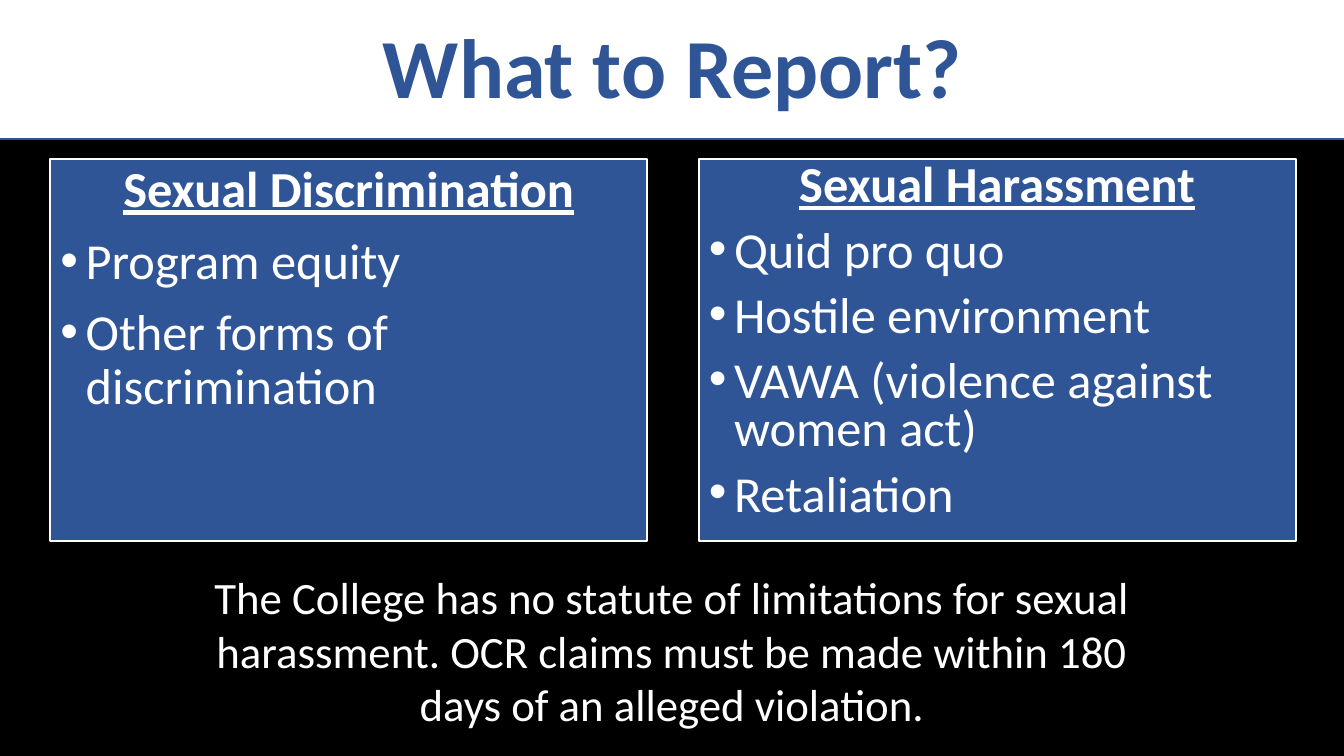
from dataclasses import dataclass

import pptx
import pptx.dml.color
import pptx.enum.shapes
import pptx.enum.text
import pptx.oxml.ns
import pptx.util
from lxml import etree

Inches = pptx.util.Inches
Pt = pptx.util.Pt
CENTER = pptx.enum.text.PP_ALIGN.CENTER
LEFT = pptx.enum.text.PP_ALIGN.LEFT
FIT = pptx.enum.text.MSO_AUTO_SIZE
ANCHOR = pptx.enum.text.MSO_ANCHOR

BLUE, WHITE, BLACK = "2F5597", "FFFFFF", "000000"


@dataclass
class Panel:
    left: float
    lines: float
    head: str
    items: list[str]


PANELS = [
    Panel(0.5, 0.9, "Sexual Discrimination",
          ["Program equity", "Other forms of discrimination"]),
    Panel(6.93, 0.8, "Sexual Harassment",
          ["Quid pro quo", "Hostile environment",
           "VAWA (violence against women act)", "Retaliation"]),
]


def color(code: str) -> pptx.dml.color.RGBColor:
    return pptx.dml.color.RGBColor.from_string(code)


def place(shape, left: float, top: float, width: float, height: float) -> None:
    shape.left, shape.top = Inches(left), Inches(top)
    shape.width, shape.height = Inches(width), Inches(height)


def paint(shape, fill: str, line: str, weight: float) -> None:
    shape.fill.solid()
    shape.fill.fore_color.rgb = color(fill)
    shape.line.color.rgb = color(line)
    shape.line.width = Pt(weight)


def write(para, text: str, *, size: float, ink: str = WHITE, bold: bool = False,
          under: bool = False, align=CENTER, lines: float = 1.0,
          after: float = 0, bullet: bool = False) -> None:
    para.alignment = align
    para.line_spacing = lines
    para.space_before, para.space_after = Pt(0), Pt(after)
    run = para.add_run()
    run.text = text
    font = run.font
    font.name, font.size, font.bold, font.underline = "Calibri", Pt(size), bold, under
    font.color.rgb = color(ink)
    # Bullet and hanging indent
    props = para._p.get_or_add_pPr()
    hang = Inches(0.25) if bullet else 0
    props.set("marL", str(hang))
    props.set("indent", str(-hang))
    if bullet:
        face = etree.SubElement(props, pptx.oxml.ns.qn("a:buFont"))
        face.set("typeface", "Arial")
        mark = etree.SubElement(props, pptx.oxml.ns.qn("a:buChar"))
        mark.set("char", "•")
    else:
        etree.SubElement(props, pptx.oxml.ns.qn("a:buNone"))


def fill_panel(shape, panel: Panel) -> None:
    place(shape, panel.left, 1.58, 5.92, 3.79)
    paint(shape, BLUE, WHITE, 1.5)
    frame = shape.text_frame
    frame.auto_size = FIT.NONE
    frame.vertical_anchor = ANCHOR.TOP
    write(frame.paragraphs[0], panel.head, size=36, bold=True, under=True,
          lines=panel.lines, after=12)
    for item in panel.items:
        write(frame.add_paragraph(), item, size=36, align=LEFT,
              lines=panel.lines, after=12, bullet=True)


def main() -> None:
    deck = pptx.Presentation()
    deck.slide_width, deck.slide_height = Inches(13.33), Inches(7.5)
    slide = deck.slides.add_slide(deck.slide_layouts.get_by_name("Two Content"))
    slide.background.fill.solid()
    slide.background.fill.fore_color.rgb = color(BLACK)
    title, *bodies = slide.placeholders

    # Title band, set behind the title
    band = slide.shapes.add_shape(
        pptx.enum.shapes.MSO_SHAPE.RECTANGLE,
        Inches(-0.13), Inches(-0.14), Inches(13.59), Inches(1.52))
    band.shadow.inherit = False
    paint(band, WHITE, BLUE, 1.75)
    title.element.addprevious(band.element)

    # Title
    place(title, 0.92, 0.4, 11.5, 0.62)
    title.text_frame.auto_size = FIT.NONE
    title.text_frame.vertical_anchor = ANCHOR.MIDDLE
    write(title.text_frame.paragraphs[0], "What to Report?", size=60, ink=BLUE,
          bold=True, lines=0.9)

    # Panels
    for body, panel in zip(bodies, PANELS):
        fill_panel(body, panel)

    # Closing note
    note = slide.shapes.add_textbox(
        Inches(2.01), Inches(5.6), Inches(9.31), Inches(1.72))
    note.text_frame.word_wrap = True
    note.text_frame.auto_size = FIT.SHAPE_TO_FIT_TEXT
    write(note.text_frame.paragraphs[0],
          "The College has no statute of limitations for sexual harassment. "
          "OCR claims must be made within 180 days of an alleged violation.",
          size=32)

    deck.save("out.pptx")


if __name__ == "__main__":
    main()
